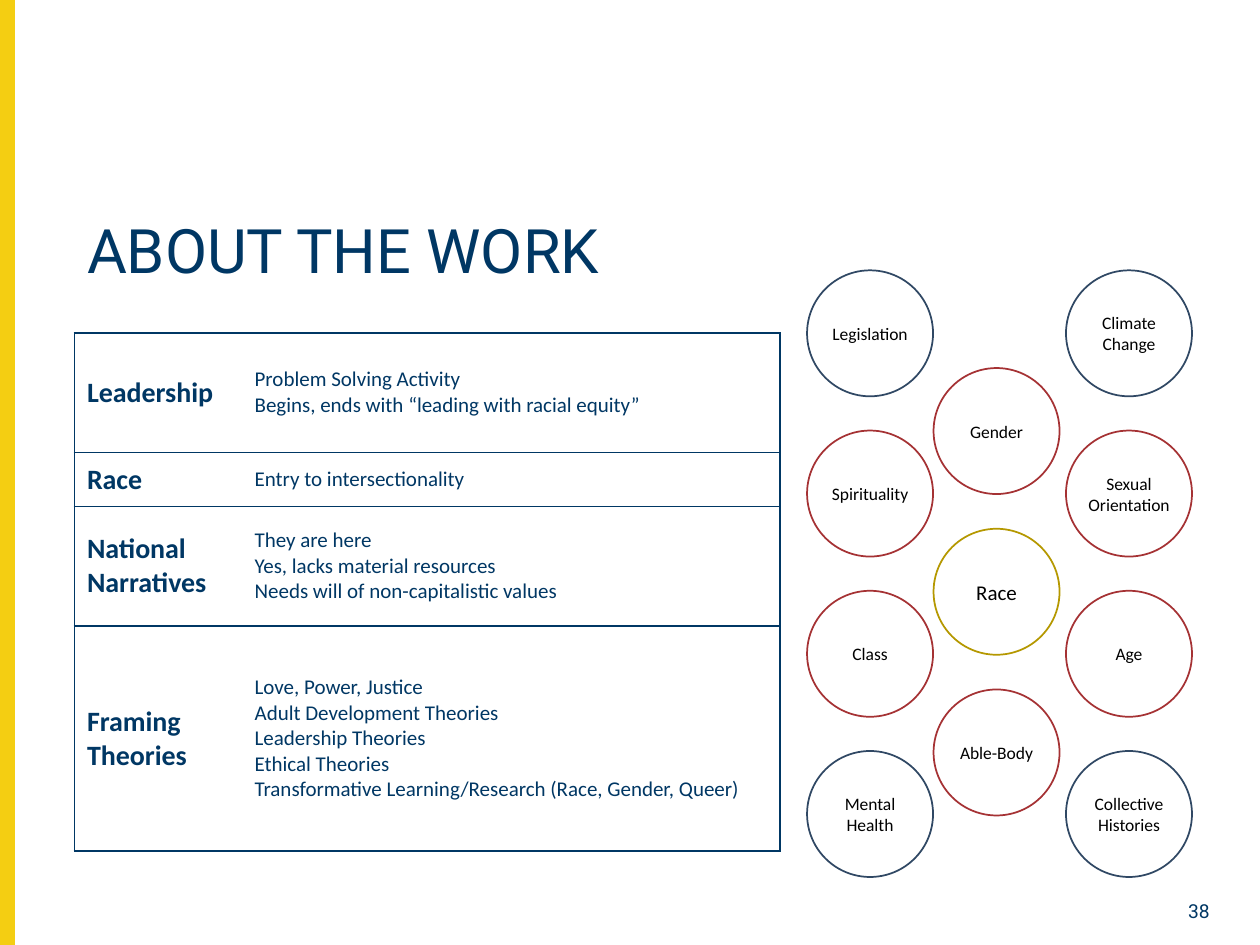
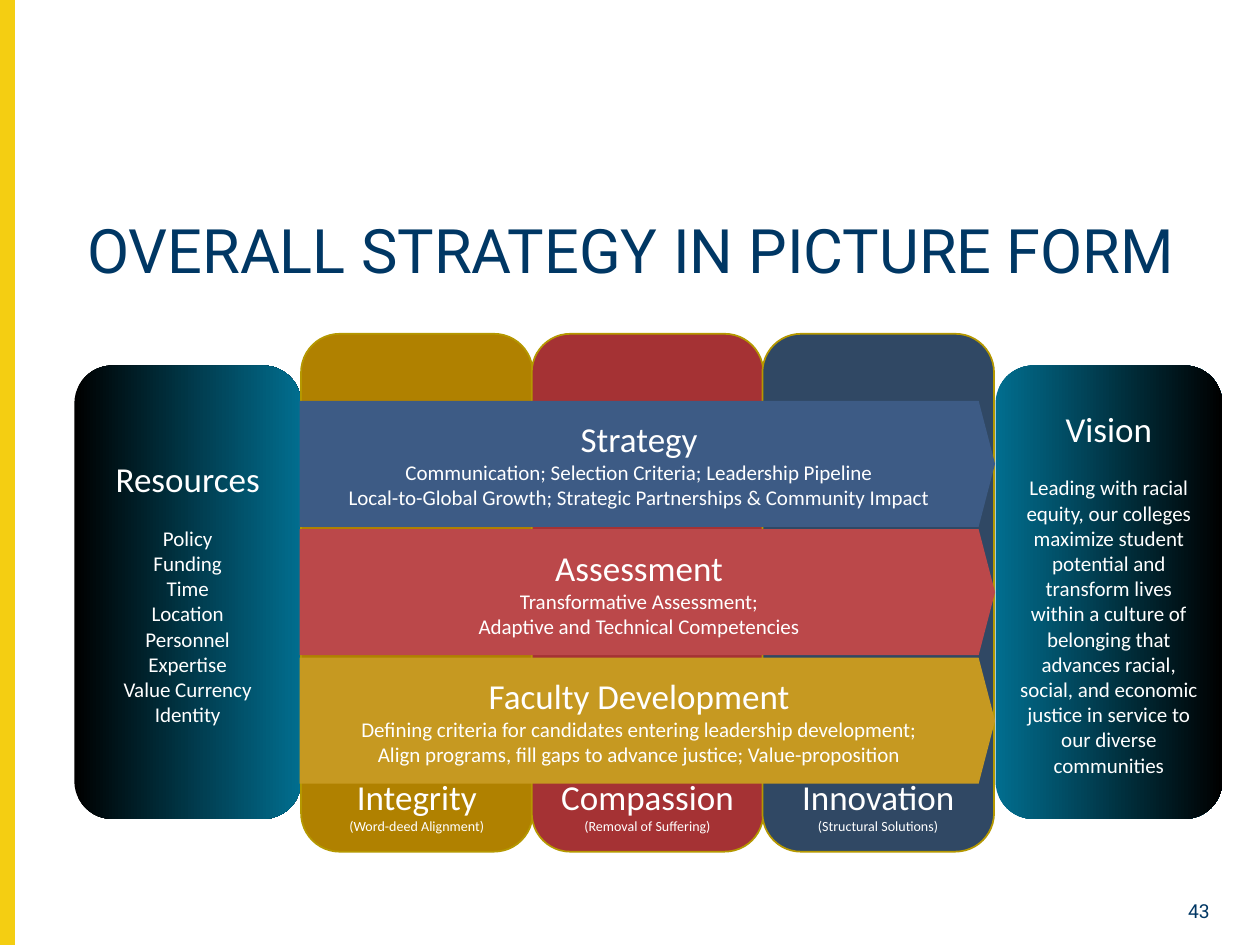
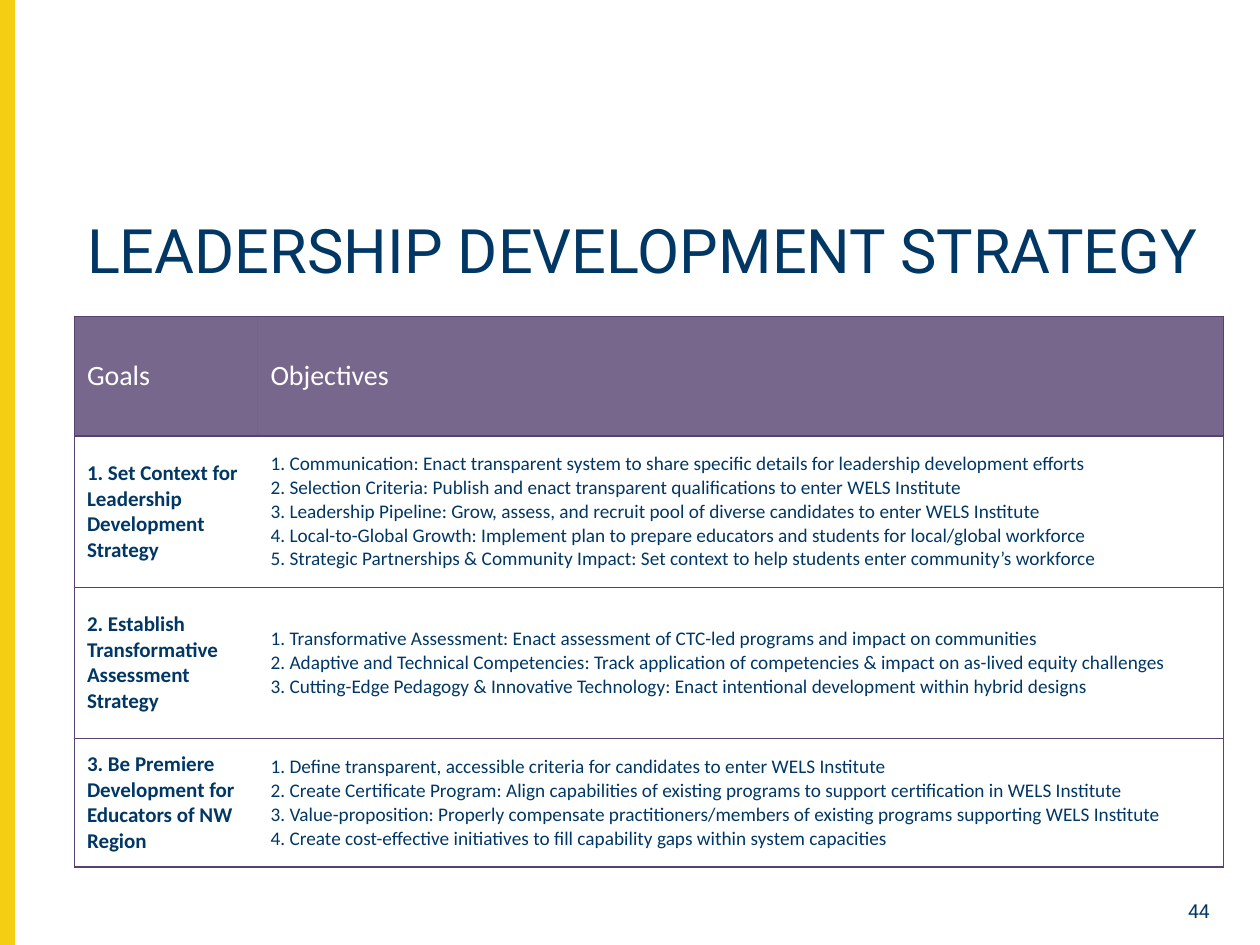
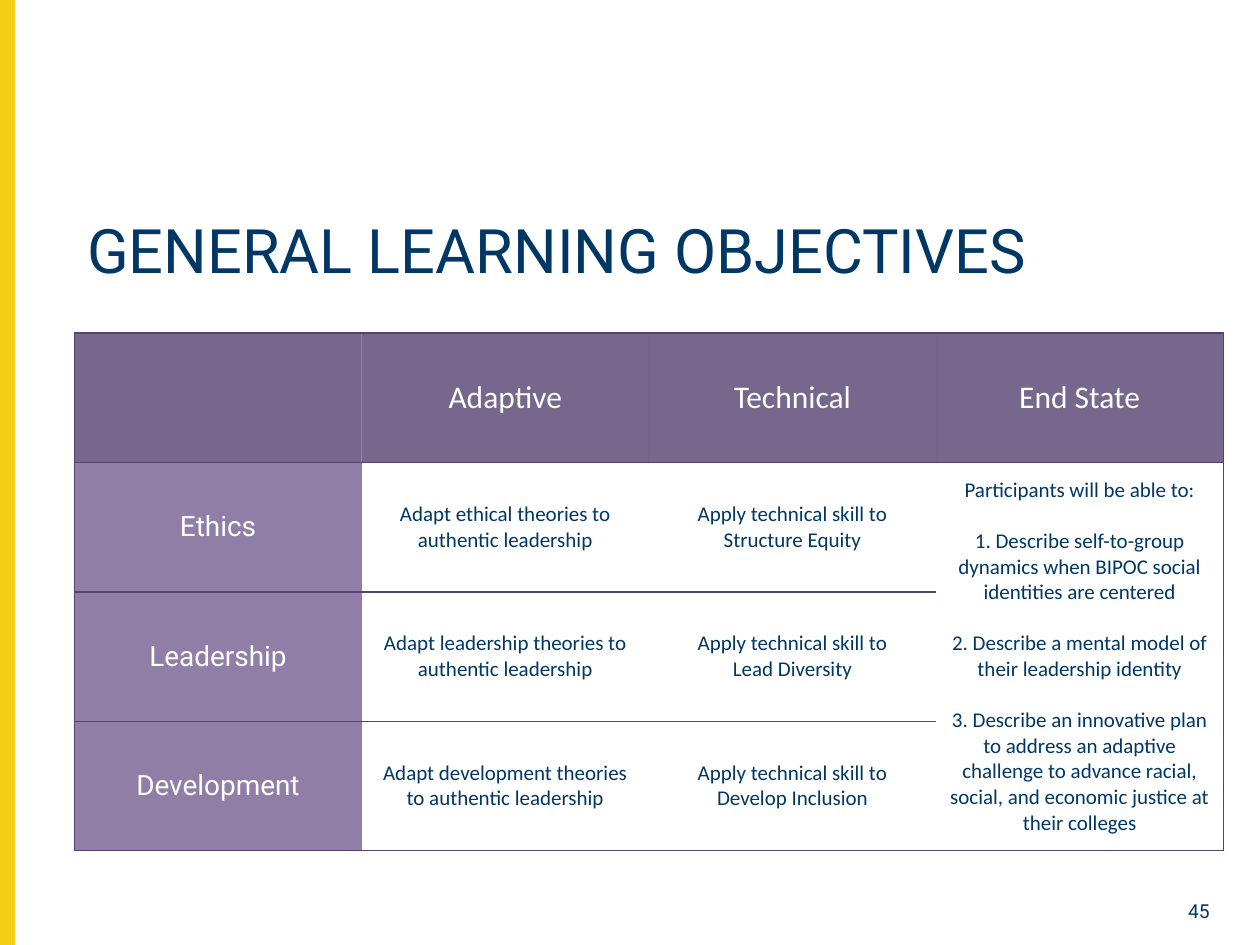
from lxml import etree
from pptx import Presentation
from pptx.dml.color import RGBColor
from pptx.enum.shapes import MSO_SHAPE
from pptx.enum.text import MSO_ANCHOR, MSO_AUTO_SIZE, PP_ALIGN
from pptx.oxml.ns import qn
from pptx.util import Cm, Pt

# Colours
NAVY = RGBColor(0x00, 0x37, 0x64)
YELLOW = RGBColor(0xF4, 0xCE, 0x12)
WHITE = RGBColor(0xFF, 0xFF, 0xFF)
BLACK = RGBColor(0x00, 0x00, 0x00)
GOLD = RGBColor(0xB5, 0x98, 0x00)
RED = RGBColor(0xA5, 0x32, 0x34)
SLATE = RGBColor(0x30, 0x48, 0x64)
OCHRE = RGBColor(0xB0, 0x81, 0x00)
TEAL = RGBColor(0x01, 0x6E, 0x8F)
BLUE = RGBColor(0x3D, 0x5B, 0x85)
ROSE = RGBColor(0xBB, 0x48, 0x4A)
AMBER = RGBColor(0xC6, 0x99, 0x21)
PLUM = RGBColor(0x57, 0x41, 0x70)
LILAC = RGBColor(0x91, 0x7E, 0xA7)

# Enum members
RECT, OVAL = MSO_SHAPE.RECTANGLE, MSO_SHAPE.OVAL
ROUND, ARROW = MSO_SHAPE.ROUNDED_RECTANGLE, MSO_SHAPE.RIGHT_ARROW
TOP, MIDDLE, BOTTOM = MSO_ANCHOR.TOP, MSO_ANCHOR.MIDDLE, MSO_ANCHOR.BOTTOM
LEFT, CENTER, RIGHT = PP_ALIGN.LEFT, PP_ALIGN.CENTER, PP_ALIGN.RIGHT

SANS, HEAD = "Calibri", "Roboto"
PLAIN = "{2D5ABB26-0587-4C30-8999-92F81FD0307C}"  # table style without grid
GAP = 14.6  # one line of 12 pt text

# Boxes in centimetres: left, top, width, height
PAGE = (25.4, 19.05)
BAND = (0, 0, 0.28, 19.05)
TITLE = (1.5, 4.32, 23.16, 2.21)
NUMBER = (23.34, 18.01, 1.3, 0.66)


def apply(thing, look):
    for key, value in look.items():
        setattr(thing, key, value)


def place(box):
    return [Cm(v) for v in box]


def write(frame, lines, color, align=CENTER, size=12, name=SANS, bold=False):
    """Fill a frame; a line is text, or (text, size, space before)."""
    for i, line in enumerate(lines):
        text, points, gap = (line, size, 0) if isinstance(line, str) else line
        para = frame.paragraphs[0] if i == 0 else frame.add_paragraph()
        run = para.add_run()
        run.text = text
        apply(para, {"alignment": align, "space_before": Pt(gap)})
        apply(run.font, {"name": name, "size": Pt(points), "bold": bold})
        run.font.color.rgb = color


def draw(slide, kind, box, fill=None, edge=None):
    shape = slide.shapes.add_shape(kind, *place(box))
    shape.shadow.inherit = False
    if fill is None:
        shape.fill.background()
    else:
        shape.fill.solid()
        shape.fill.fore_color.rgb = fill
    if edge is None:
        shape.line.fill.background()
    else:
        shape.line.color.rgb = edge
        shape.line.width = Pt(1)
    apply(shape.text_frame, {"word_wrap": True, "vertical_anchor": MIDDLE})
    return shape


def start(deck, title, number):
    """Slide with title and page number."""
    slide = deck.slides.add_slide(deck.slide_layouts[5])
    head = slide.shapes.title
    apply(head, dict(zip(("left", "top", "width", "height"), place(TITLE))))
    apply(head.text_frame, {"word_wrap": True, "vertical_anchor": TOP,
                            "auto_size": MSO_AUTO_SIZE.NONE})
    write(head.text_frame, [title], NAVY, LEFT, 35, HEAD)
    head.text_frame.paragraphs[0].line_spacing = 0.9
    foot = slide.shapes.add_textbox(*place(NUMBER)).text_frame
    foot.word_wrap = True
    write(foot, [number], NAVY, RIGHT, 11, HEAD)
    return slide


def border(cell, sides, color):
    props = cell._tc.get_or_add_tcPr()
    for side in sides:
        line = etree.SubElement(props, qn("a:ln" + side), w=str(Pt(1)))
        fill = etree.SubElement(line, qn("a:solidFill"))
        etree.SubElement(fill, qn("a:srgbClr"), val=str(color))


def paint(cell, color):
    if color is None:
        cell.fill.background()
        return
    cell.fill.solid()
    cell.fill.fore_color.rgb = color
    if color == PLUM:  # header cells are slightly transparent
        tone = cell._tc.tcPr.find(qn("a:solidFill"))[0]
        etree.SubElement(tone, qn("a:alpha"), val="80000")


def grid(slide, spot, widths, heights, rows, edge, look, merge=None):
    """Table; look(row, col) gives the fill and the text format of a cell."""
    box = (*spot, sum(widths), sum(heights))
    holder = slide.shapes.add_table(len(heights), len(widths), *place(box))
    holder.element.find(".//" + qn("a:tableStyleId")).text = PLAIN
    table = holder.table
    for col, width in zip(table.columns, widths):
        col.width = Cm(width)
    for row, height in zip(table.rows, heights):
        row.height = Cm(height)
    if merge:
        first, last = merge
        table.cell(*first).merge(table.cell(*last))
    for r, row in enumerate(rows):
        for c, lines in enumerate(row):
            cell = table.cell(r, c)
            fill, form = look(r, c)
            sides = ["L"] * (c == 0) + ["R"] * (c == len(widths) - 1)
            border(cell, sides + ["T", "B"], edge)
            paint(cell, fill)
            cell.vertical_anchor = MIDDLE
            write(cell.text_frame, lines, **form)


# Slide 1
def rings(slide, box):
    """Three columns of circles, the middle one set lower."""
    left, top = box
    size = 2.54
    cols = [
        (0.03, 0, 3.23, [("Legislation", SLATE), ("Spirituality", RED),
                         ("Class", RED), ("Mental Health", SLATE)]),
        (2.58, 1.97, 3.24, [("Gender", RED), ("Race", GOLD),
                            ("Able-Body", RED)]),
        (5.25, 0, 3.23, [("Climate Change", SLATE),
                         ("Sexual Orientation", RED), ("Age", RED),
                         ("Collective Histories", SLATE)]),
    ]
    for x, y, step, names in cols:
        for i, (name, edge) in enumerate(names):
            spot = (left + x, top + y + i * step, size, size)
            frame = draw(slide, OVAL, spot, edge=edge).text_frame
            apply(frame, {"margin_left": 0, "margin_right": 0})
            write(frame, [name], BLACK, size=12 if edge == GOLD else 10)


def about(deck):
    slide = start(deck, "ABOUT THE WORK", "38")
    rings(slide, (16.24, 5.45))
    rows = [
        (["Leadership"],
         ["Problem Solving Activity",
          "Begins, ends with “leading with racial equity”"]),
        (["Race"], ["Entry to intersectionality"]),
        (["National Narratives"],
         ["They are here", "Yes, lacks material resources",
          "Needs will of non-capitalistic values"]),
        (["Framing Theories"],
         ["Love, Power, Justice", "Adult Development Theories",
          "Leadership Theories", "Ethical Theories",
          "Transformative Learning/Research (Race, Gender, Queer)"]),
    ]

    def look(r, c):
        return None, {"color": NAVY, "align": LEFT,
                      "size": 12 if c else 16, "bold": c == 0}

    grid(slide, (1.5, 6.71), (3.38, 10.84), (2.41, 1.09, 2.41, 4.54),
         rows, NAVY, look)


# Slide 2
def ends(slide, box):
    """Gradient panels at the left and right of the box."""
    left, top, width, height = box
    side = 4.57
    panels = [
        (left, (BLACK, TEAL), "Resources",
         ["Policy", "Funding", "Time", "Location", "Personnel", "Expertise",
          "Value Currency", "Identity"]),
        (left + width - side, (TEAL, BLACK), "Vision",
         ["Leading with racial equity, our colleges maximize student "
          "potential and transform lives within a culture of belonging that "
          "advances racial, social, and economic justice in service to our "
          "diverse communities"]),
    ]
    for x, tones, head, lines in panels:
        shape = draw(slide, ROUND, (x, top, side, height))
        shape.fill.gradient()
        shape.fill.gradient_angle = 0
        for stop, tone in zip(shape.fill.gradient_stops, tones):
            stop.color.rgb = tone
        text = [(head, 20, 0), (lines[0], 12, GAP), *lines[1:]]
        write(shape.text_frame, text, WHITE)


def posts(slide, box):
    """Upright pillars, labelled at the foot."""
    left, top, width, height = box
    items = [(OCHRE, "Integrity", "(Word-deed Alignment)"),
             (RED, "Compassion", "(Removal of Suffering)"),
             (SLATE, "Innovation", "(Structural Solutions)")]
    for i, (fill, head, note) in enumerate(items):
        spot = (left + i * 4.65, top, width, height)
        frame = draw(slide, ROUND, spot, fill, GOLD).text_frame
        frame.vertical_anchor = BOTTOM
        write(frame, [(head, 20, 0), note], WHITE, size=8)


def arrows(slide, box):
    """Stacked arrows across the pillars."""
    left, top, width, height = box
    items = [
        (BLUE, "Strategy",
         "Communication; Selection Criteria; Leadership Pipeline",
         "Local-to-Global Growth; Strategic Partnerships & Community Impact"),
        (ROSE, "Assessment", "Transformative Assessment;",
         "Adaptive and Technical Competencies"),
        (AMBER, "Faculty Development",
         "Defining criteria for candidates entering leadership development;",
         "Align programs, fill gaps to advance justice; Value-proposition"),
    ]
    for i, (fill, head, *lines) in enumerate(items):
        spot = (left, top + i * 2.59, width, height)
        shape = draw(slide, ARROW, spot, fill)
        shape.adjustments[0] = 1
        shape.adjustments[1] = 0.13
        write(shape.text_frame, [(head, 20, 0), *lines], WHITE)


def scheme(deck):
    slide = start(deck, "OVERALL STRATEGY IN PICTURE FORM", "43")
    ends(slide, (1.5, 7.37, 23.14, 9.14))
    posts(slide, (6.07, 6.73, 4.67, 10.44))
    arrows(slide, (6.04, 8.08, 14.02, 2.54))


# Slide 3
def goals(deck):
    slide = start(deck, "LEADERSHIP DEVELOPMENT STRATEGY", "44")
    rows = [
        (["Goals"], ["Objectives"]),
        (["1. Set Context for Leadership Development Strategy"],
         ["1. Communication: Enact transparent system to share specific "
          "details for leadership development efforts",
          "2. Selection Criteria: Publish and enact transparent "
          "qualifications to enter WELS Institute",
          "3. Leadership Pipeline: Grow, assess, and recruit pool of diverse "
          "candidates to enter WELS Institute",
          "4. Local-to-Global Growth: Implement plan to prepare educators "
          "and students for local/global workforce",
          "5. Strategic Partnerships & Community Impact: Set context to help "
          "students enter community’s workforce"]),
        (["2. Establish Transformative Assessment Strategy"],
         ["1. Transformative Assessment: Enact assessment of CTC-led "
          "programs and impact on communities",
          "2. Adaptive and Technical Competencies: Track application of "
          "competencies & impact on as-lived equity challenges",
          "3. Cutting-Edge Pedagogy & Innovative Technology: Enact "
          "intentional development within hybrid designs"]),
        (["3. Be Premiere Development for Educators of NW Region"],
         ["1. Define transparent, accessible criteria for candidates to "
          "enter WELS Institute",
          "2. Create Certificate Program: Align capabilities of existing "
          "programs to support certification in WELS Institute",
          "3. Value-proposition: Properly compensate practitioners/members "
          "of existing programs supporting WELS Institute",
          "4. Create cost-effective initiatives to fill capability gaps "
          "within system capacities"]),
    ]

    def look(r, c):
        if r == 0:
            return PLUM, {"color": WHITE, "align": LEFT, "size": 16}
        return WHITE, {"color": NAVY, "align": LEFT,
                       "size": 11 if c else 12, "bold": c == 0}

    grid(slide, (1.5, 6.38), (3.7, 19.46), (2.41, 3.05, 3.05, 2.59),
         rows, PLUM, look)


# Slide 4
def aims(deck):
    slide = start(deck, "GENERAL LEARNING OBJECTIVES", "45")
    skill = "Apply technical skill to"
    state = [
        "Participants will be able to:",
        ("1. Describe self-to-group dynamics when BIPOC social identities "
         "are centered", 12, GAP),
        ("2. Describe a mental model of their leadership identity", 12, GAP),
        ("3. Describe an innovative plan to address an adaptive challenge to "
         "advance racial, social, and economic justice at their colleges",
         12, GAP),
    ]
    rows = [
        ([], ["Adaptive"], ["Technical"], ["End State"]),
        (["Ethics"], ["Adapt ethical theories to authentic leadership"],
         [skill, "Structure Equity"], state),
        (["Leadership"],
         ["Adapt leadership theories to authentic leadership"],
         [skill, "Lead Diversity"]),
        (["Development"],
         ["Adapt development theories to authentic leadership"],
         [skill, "Develop Inclusion"]),
    ]

    def look(r, c):
        if r == 0:
            return PLUM, {"color": WHITE, "size": 18}
        if c == 0:
            return LILAC, {"color": WHITE, "size": 16, "name": HEAD}
        return None, {"color": NAVY}

    grid(slide, (1.5, 6.71), [5.79] * 4, [2.61] * 4, rows, PLUM, look,
         merge=((1, 3), (3, 3)))


def main():
    deck = Presentation()
    deck.slide_width, deck.slide_height = place(PAGE)
    for build in (about, scheme, goals, aims):
        build(deck)
    # The side band belongs to the shared layout
    band = draw(deck.slides[0], RECT, BAND, YELLOW, YELLOW)
    deck.slide_layouts[5].shapes.element.insert(2, band.element)
    deck.save("out.pptx")


if __name__ == "__main__":
    main()
